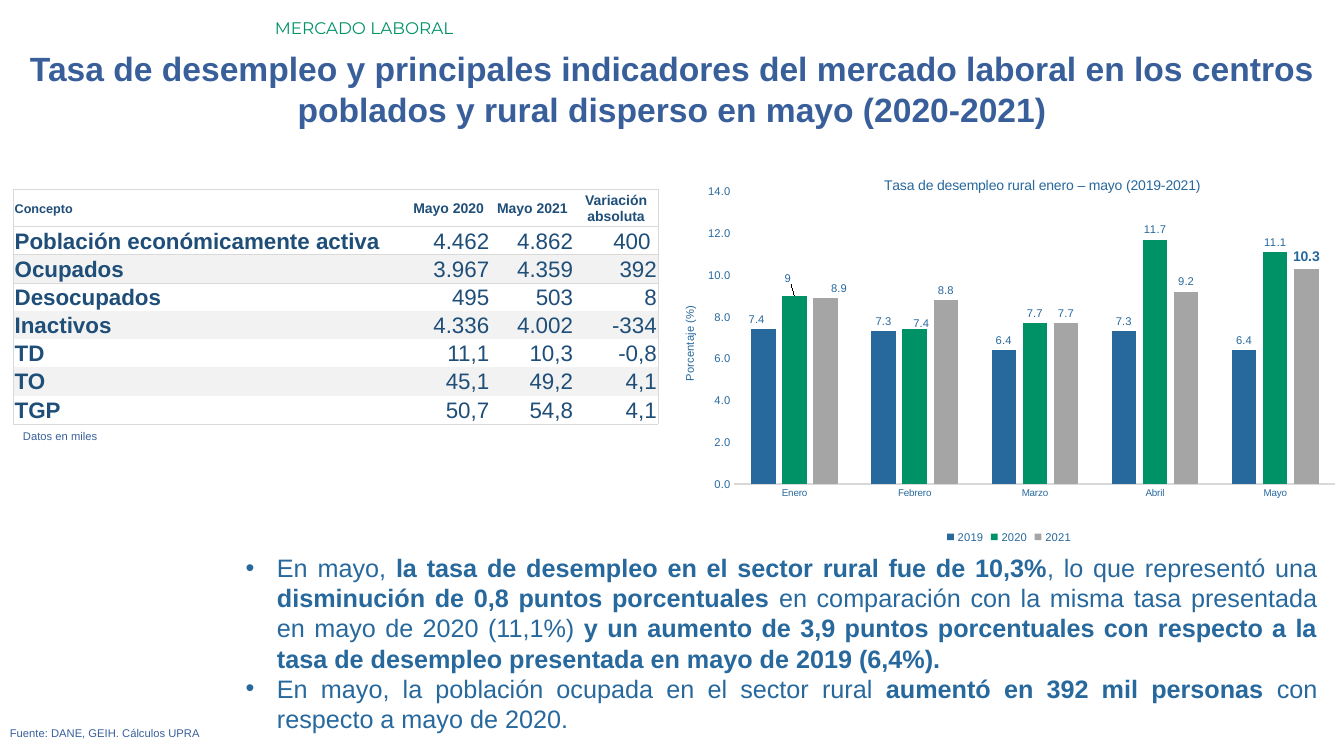
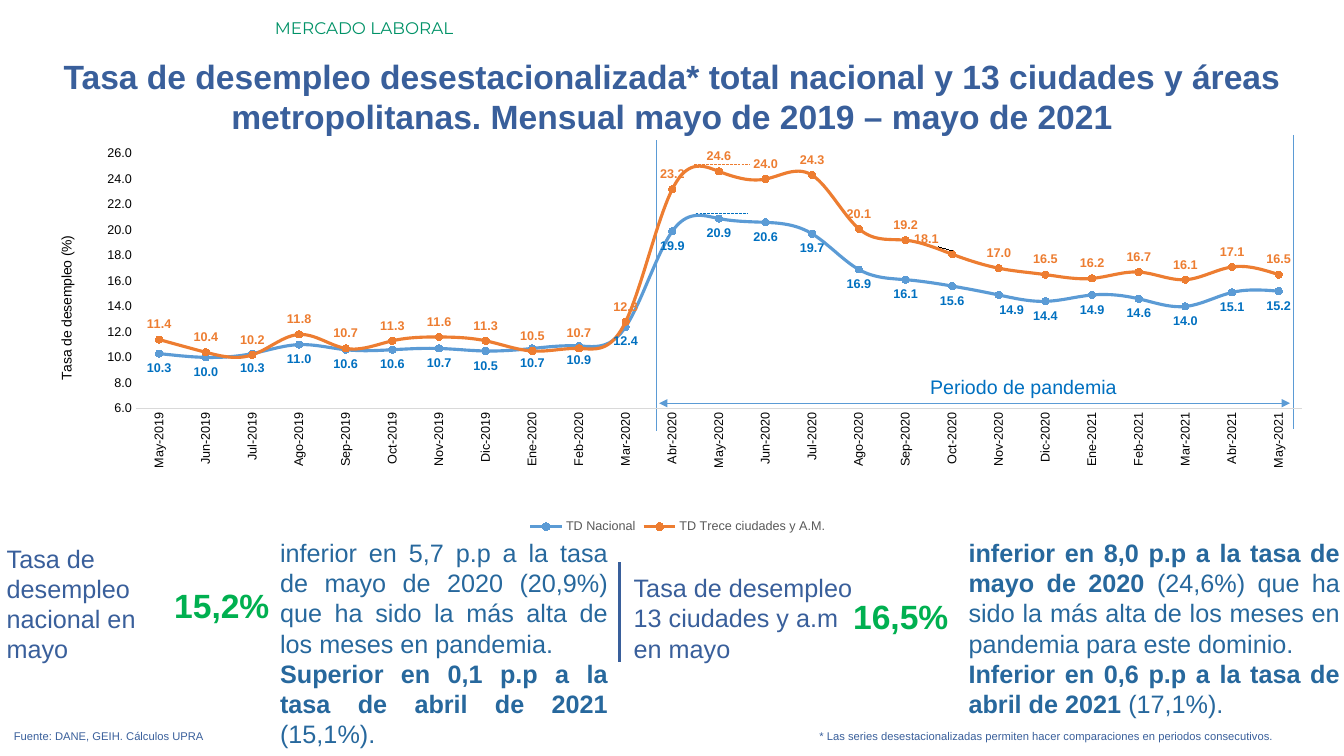
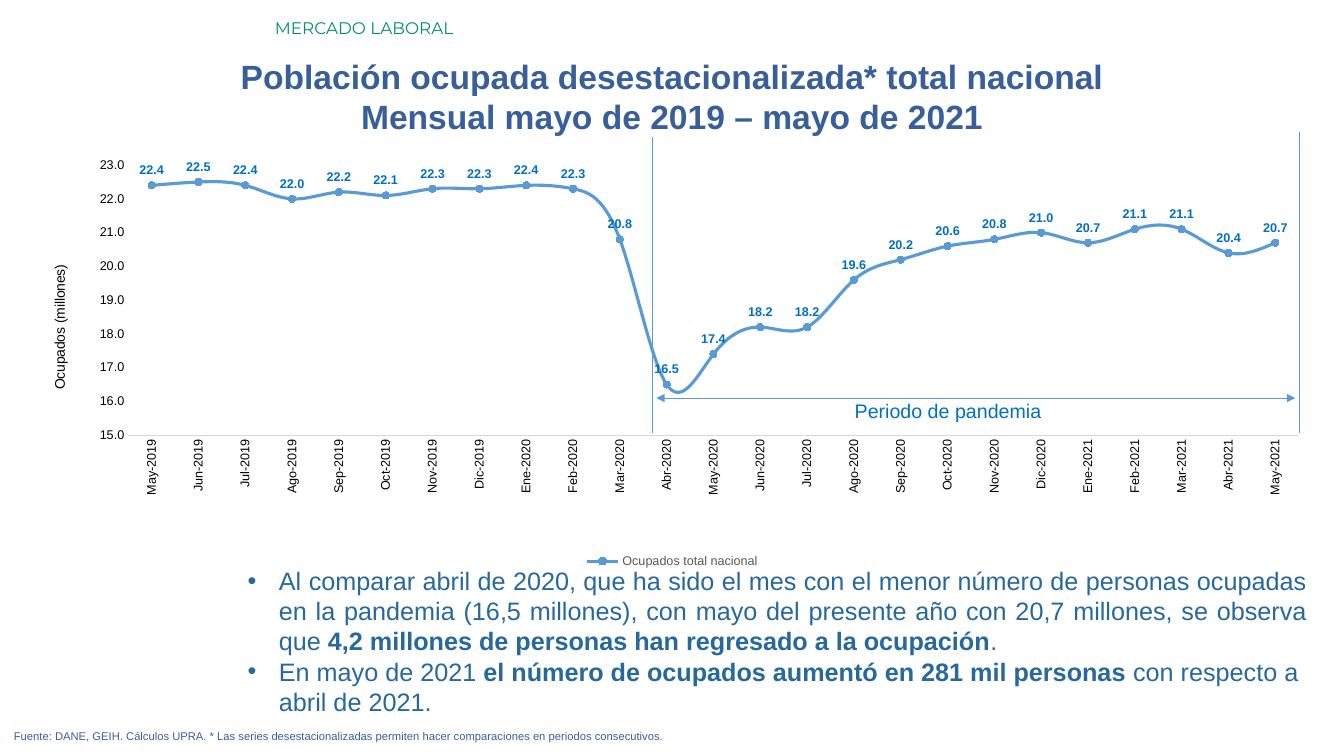
from lxml import etree
from pptx import Presentation
from pptx.chart.data import CategoryChartData
from pptx.dml.color import RGBColor
from pptx.enum.chart import (XL_CHART_TYPE, XL_LABEL_POSITION, XL_LEGEND_POSITION,
                             XL_MARKER_STYLE, XL_TICK_MARK)
from pptx.enum.dml import MSO_LINE
from pptx.enum.shapes import MSO_CONNECTOR
from pptx.enum.text import MSO_ANCHOR, MSO_AUTO_SIZE, PP_ALIGN
from pptx.oxml.ns import qn
from pptx.util import Cm, Pt

COLUMNS, LINES = XL_CHART_TYPE.COLUMN_CLUSTERED, XL_CHART_TYPE.LINE_MARKERS
OUTSIDE, ABOVE, BELOW = (XL_LABEL_POSITION.OUTSIDE_END, XL_LABEL_POSITION.ABOVE,
                         XL_LABEL_POSITION.BELOW)
LEFT, CENTER, RIGHT, JUSTIFY = PP_ALIGN.LEFT, PP_ALIGN.CENTER, PP_ALIGN.RIGHT, PP_ALIGN.JUSTIFY
NO_TICK, STRAIGHT = XL_TICK_MARK.NONE, MSO_CONNECTOR.STRAIGHT

NAVY, BLUE, GREEN, RESULT = "395F9B", "27689D", "009267", "00B050"
SKY, ORANGE, STRONG_BLUE, GRAY = "5B9BD5", "ED7D31", "0070C0", "A5A5A5"
TABLE_INK, RULE, BAND, BLACK, LEGEND_INK = "1F4E78", "D9D9D9", "F2F2F2", "000000", "595959"
PLAIN_TABLE = "{2D5ABB26-0587-4C30-8999-92F81FD0307C}"
ONE_DECIMAL = "#,##0.0"

SECTION = "MERCADO LABORAL"
SOURCE = "Fuente: DANE, GEIH. Cálculos UPRA"
SERIES_NOTE = "* Las series desestacionalizadas permiten hacer comparaciones en periodos consecutivos."
PERIOD = "Periodo de pandemia"

TITLES = [
    (1.09, ["Tasa de desempleo y principales indicadores del mercado laboral en los centros "
            "poblados y rural disperso en mayo (2020-2021)"]),
    (1.27, ["Tasa de desempleo desestacionalizada* total nacional y 13 ciudades y áreas "
            "metropolitanas. Mensual mayo de 2019 – mayo de 2021"]),
    (1.27, ["Población ocupada desestacionalizada* total nacional",
            "Mensual mayo de 2019 – mayo de 2021"]),
]
FOOTERS = [
    [(0, 18.19, SOURCE)],
    [(0.1, 18.26, SOURCE), (20.4, 18.26, SERIES_NOTE)],
    [(0.1, 18.26, f"{SOURCE}. {SERIES_NOTE}")],
]

INDICATORS = [
    ("Concepto", "Mayo 2020", "Mayo 2021", "Variación absoluta"),
    ("Población económicamente activa", "4.462", "4.862", "400 "),
    ("Ocupados", "3.967", "4.359", "392"),
    ("Desocupados", "495", "503", "8"),
    ("Inactivos", "4.336", "4.002", "-334"),
    ("TD", "11,1", "10,3", "-0,8"),
    ("TO", "45,1", "49,2", "4,1"),
    ("TGP", "50,7", "54,8", "4,1"),
]
RURAL_BULLETS = [
    "En mayo, **la tasa de desempleo en el sector rural fue de 10,3%**, lo que representó una "
    "**disminución de 0,8 puntos porcentuales** en comparación con la misma tasa presentada en "
    "mayo de 2020 (11,1%) **y un aumento de 3,9 puntos porcentuales con respecto a la tasa de "
    "desempleo presentada en mayo de 2019 (6,4%).**",
    "En mayo, la población ocupada en el sector rural **aumentó en 392 mil personas **con "
    "respecto a mayo de 2020.",
]
EMPLOYED_BULLETS = [
    "Al comparar abril de 2020, que ha sido el mes con el menor número de personas ocupadas en "
    "la pandemia (16,5 millones), con mayo del presente año con 20,7 millones, se observa que "
    "**4,2 millones de personas han regresado a la ocupación**.",
    "En mayo de 2021 **el número de ocupados aumentó en 281 mil personas **con respecto a "
    "abril de 2021.",
]
RATE_TEXTS = [
    ((-0.08, 13.56, 5.64, 3.33), ["Tasa de desempleo nacional en", "mayo"], 18, NAVY, LEFT),
    ((4.09, 14.61, 2.95, 1.27), ["**15,2%**"], 24, RESULT, RIGHT),
    ((6.81, 13.41, 8.76, 5.64),
     ["inferior en 5,7 p.p a la tasa de mayo de 2020 (20,9%) que ha sido la más alta de los "
      "meses en pandemia.",
      "**Superior en 0,1 p.p a la tasa de abril de 2021 **(15,1%)."], 18, BLUE, JUSTIFY),
    ((15.72, 14.3, 6.22, 3.33), ["Tasa de desempleo", "13 ciudades y a.m en mayo"], 18, NAVY, LEFT),
    ((20.47, 14.88, 3.68, 1.27), ["**16,5%**"], 24, RESULT, RIGHT),
    ((24.16, 13.41, 9.86, 4.88),
     ["**inferior en 8,0 p.p a la tasa de mayo de 2020 **(24,6%) que ha sido la más alta de los "
      "meses en pandemia para este dominio.",
      "**Inferior en 0,6 p.p a la tasa de abril de 2021 **(17,1%)."], 18, BLUE, JUSTIFY),
]

MONTH_NAMES = "Ene Feb Mar Abr May Jun Jul Ago Sep Oct Nov Dic".split()
MONTHS = [f"{MONTH_NAMES[i % 12]}-{2019 + i // 12}" for i in range(4, 29)]

RURAL_CHART = {
    "kind": COLUMNS, "box": (16.97, 4.09, 16.92, 9.7), "plot": (0.091, 0.076, 0.895, 0.76),
    "categories": ["Enero", "Febrero", "Marzo", "Abril", "Mayo"],
    "title": ("Tasa de desempleo rural enero – mayo (2019-2021)", 0.31, 0.03),
    "axis_title": ("Porcentaje (%)", 0.01, 0.366), "scale": (0, 14, 2),
    "size": 8, "month_size": 7, "ink": BLUE, "legend_ink": BLUE,
    "bold": False, "label_format": "General",
    "series": [("2019", [7.4, 7.3, 6.4, 7.3, 6.4], BLUE, BLUE, OUTSIDE),
               ("2020", [9, 7.4, 7.7, 11.7, 11.1], GREEN, BLUE, OUTSIDE),
               ("2021", [8.9, 8.8, 7.7, 9.2, 10.3], GRAY, BLUE, OUTSIDE)],
    "nudges": [(0, 0, -0.01, 0), (1, 0, -0.01, -0.02), (1, 1, 0.01, 0.01), (2, 0, 0.02, 0)],
}
MONTHLY = {
    "kind": LINES, "plot": (0.079, 0.051, 0.906, 0.629), "categories": MONTHS, "title": None,
    "size": 9, "month_size": 9, "ink": BLACK, "legend_ink": LEGEND_INK,
    "bold": True, "label_format": ONE_DECIMAL, "nudges": [],
}
RATE_CHART = MONTHLY | {
    "box": (0.86, 3.35, 32.44, 10.21), "scale": (6, 26, 2),
    "axis_title": ("Tasa de desempleo (%)", 0.016, 0.247),
    "series": [
        ("TD Nacional", [10.3, 10, 10.3, 11, 10.6, 10.6, 10.7, 10.5, 10.7, 10.9, 12.4, 19.9, 20.9,
                         20.6, 19.7, 16.9, 16.1, 15.6, 14.9, 14.4, 14.9, 14.6, 14, 15.1, 15.2],
         SKY, STRONG_BLUE, BELOW),
        ("TD Trece ciudades y A.M.",
         [11.4, 10.4, 10.2, 11.8, 10.7, 11.3, 11.6, 11.3, 10.5, 10.7, 12.8, 23.2, 24.6,
          24, 24.3, 20.1, 19.2, 18.1, 17, 16.5, 16.2, 16.7, 16.1, 17.1, 16.5],
         ORANGE, ORANGE, ABOVE)],
    "nudges": [(0, 18, 0.01, 0), (1, 17, -0.02, 0)],
}
EMPLOYED_CHART = MONTHLY | {
    "box": (0.66, 3.61, 32.56, 10.82), "scale": (15, 23, 1),
    "axis_title": ("Ocupados (millones)", 0.017, 0.277),
    "series": [
        ("Ocupados total nacional",
         [22.4, 22.5, 22.4, 22, 22.2, 22.1, 22.3, 22.3, 22.4, 22.3, 20.8, 16.5, 17.4,
          18.2, 18.2, 19.6, 20.2, 20.6, 20.8, 21, 20.7, 21.1, 21.1, 20.4, 20.7],
         SKY, STRONG_BLUE, ABOVE)],
}


def rgb(color):
    return RGBColor.from_string(color)


def style(font, size, color, bold=False, name="Arial"):
    for key, value in {"size": Pt(size), "bold": bold, "name": name}.items():
        setattr(font, key, value)
    font.color.rgb = rgb(color)


def write(frame, paragraphs, size, color, align=LEFT, bold=False, name="Arial", bullet=False):
    for i, content in enumerate(paragraphs):
        paragraph = frame.paragraphs[0] if i == 0 else frame.add_paragraph()
        paragraph.alignment = align
        if bullet:
            properties = paragraph._p.get_or_add_pPr()
            properties.set("marL", str(Cm(0.79)))
            properties.set("indent", str(-Cm(0.79)))
            etree.SubElement(properties, qn("a:buFont")).set("typeface", "Arial")
            etree.SubElement(properties, qn("a:buChar")).set("char", "•")
        for j, part in enumerate(content.split("**")):
            if part:
                run = paragraph.add_run()
                run.text = part
                style(run.font, size, color, bold or j % 2 == 1, name)


def add_text(slide, box, paragraphs, size, color, align=LEFT, **options):
    frame = slide.shapes.add_textbox(*map(Cm, box)).text_frame
    frame.word_wrap = True
    write(frame, paragraphs, size, color, align, **options)
    return frame


def add_line(slide, start, end, color, width, dash=None, arrows=False):
    line = slide.shapes.add_connector(STRAIGHT, *map(Cm, start + end))
    etree.SubElement(line._element.spPr, qn("a:effectLst"))
    line.line.color.rgb = rgb(color)
    line.line.width = Pt(width)
    if dash:
        line.line.dash_style = dash
    if arrows:
        for tag in ("a:headEnd", "a:tailEnd"):
            etree.SubElement(line.line._get_or_add_ln(), qn(tag)).set("type", "triangle")


def add_period(slide, left, right, arrow, label):
    for x, top, bottom in (left, right):
        add_line(slide, (x, top), (x, bottom), SKY, 0.5)
    start, end, y = arrow
    add_line(slide, (start, y), (end, y), SKY, 0.5, arrows=True)
    add_text(slide, (*label, 6.68, 0.86), [PERIOD], 14, STRONG_BLUE)


def add_layout(parent, index, **values):
    for old in parent.findall(qn("c:layout")):
        parent.remove(old)
    layout = etree.Element(qn("c:layout"))
    manual = etree.SubElement(layout, qn("c:manualLayout"))
    for tag, value in values.items():
        etree.SubElement(manual, qn(f"c:{tag}")).set("val", str(value))
    parent.insert(index, layout)


def write_chart_title(title, content, size, color):
    words, x, y = content
    write(title.text_frame, [words], size, color, CENTER)
    add_layout(title._element, 1, xMode="edge", yMode="edge", x=x, y=y)


def format_axes(chart, data):
    months, values = chart.category_axis, chart.value_axis
    for axis, size in ((months, data["month_size"]), (values, data["size"])):
        axis.has_major_gridlines = False
        axis.major_tick_mark = axis.minor_tick_mark = NO_TICK
        style(axis.tick_labels.font, size, data["ink"])
    months.format.line.color.rgb = rgb(RULE)
    months.format.line.width = Pt(0.75)
    values.format.line.fill.background()
    values.minimum_scale, values.maximum_scale, values.major_unit = data["scale"]
    values.tick_labels.number_format = ONE_DECIMAL
    values.tick_labels.number_format_is_linked = False
    values.has_title = True
    write_chart_title(values.axis_title, data["axis_title"],
                      8 if data["kind"] == COLUMNS else 10, data["ink"])
    if data["kind"] == LINES:
        months._element.find(qn("c:txPr")).find(qn("a:bodyPr")).set("rot", "-5400000")
    if values._element.find(qn("c:crossBetween")) is None:
        between = etree.Element(qn("c:crossBetween"))
        between.set("val", "between")
        values._element.find(qn("c:crosses")).addnext(between)


def format_series(series, data, color, label_color, position):
    if data["kind"] == COLUMNS:
        series.format.fill.solid()
        series.format.fill.fore_color.rgb = rgb(color)
    else:
        series.smooth = True
        series.format.line.color.rgb = rgb(color)
        series.format.line.width = Pt(2.25)
        series.marker.style = XL_MARKER_STYLE.CIRCLE
        series.marker.size = 5
        series.marker.format.fill.solid()
        series.marker.format.fill.fore_color.rgb = rgb(color)
        series.marker.format.line.color.rgb = rgb(color)
    labels = series.data_labels
    for key, value in {"show_value": True, "position": position,
                       "number_format": data["label_format"],
                       "number_format_is_linked": False}.items():
        setattr(labels, key, value)
    style(labels.font, data["size"], label_color, data["bold"])


def add_chart(slide, data):
    chart_data = CategoryChartData()
    chart_data.categories = data["categories"]
    for name, values, *_ in data["series"]:
        chart_data.add_series(name, values)
    chart = slide.shapes.add_chart(data["kind"], *map(Cm, data["box"]), chart_data).chart
    style(chart.font, data["size"], data["ink"])
    chart.has_title = data["title"] is not None
    if data["title"]:
        write_chart_title(chart.chart_title, data["title"], 10, data["ink"])
    chart.has_legend = True
    chart.legend.position = XL_LEGEND_POSITION.BOTTOM
    chart.legend.include_in_layout = False
    style(chart.legend.font, data["size"], data["legend_ink"])
    format_axes(chart, data)
    plot = chart.plots[0]
    plot.vary_by_categories = False
    if data["kind"] == COLUMNS:
        plot.gap_width, plot.overlap = 136, -27
    for series, (_, _, *look) in zip(plot.series, data["series"]):
        format_series(series, data, *look)
    for series_index, point, dx, dy in data["nudges"]:
        _, _, _, color, position = data["series"][series_index]
        label = plot.series[series_index].points[point].data_label
        style(label.font, data["size"], color, data["bold"])
        label.position = position
        add_layout(label._get_or_add_dLbl(), 1, x=dx, y=dy)
    x, y, w, h = data["plot"]
    add_layout(chart._chartSpace.chart.plotArea, 0, layoutTarget="inner",
               xMode="edge", yMode="edge", x=x, y=y, w=w, h=h)
    return chart


def add_border(cell, side):
    line = etree.SubElement(cell._tc.get_or_add_tcPr(), qn(f"a:ln{side}"))
    line.set("w", str(Pt(0.5)))
    fill = etree.SubElement(line, qn("a:solidFill"))
    etree.SubElement(fill, qn("a:srgbClr")).set("val", RULE)


def add_indicators(slide):
    widths = [9.91] + [2.11] * 3
    heights = [0.93] + [0.71] * (len(INDICATORS) - 1)
    last_row, last_column = len(heights) - 1, len(widths) - 1
    table = slide.shapes.add_table(len(heights), len(widths), Cm(0.34), Cm(4.78),
                                   Cm(sum(widths)), Cm(sum(heights))).table
    table._tbl.tblPr.find(qn("a:tableStyleId")).text = PLAIN_TABLE
    for column, width in zip(table.columns, widths):
        column.width = Cm(width)
    for row, height in zip(table.rows, heights):
        row.height = Cm(height)
    for r, record in enumerate(INDICATORS):
        for c, content in enumerate(record):
            cell = table.cell(r, c)
            cell.margin_left = cell.margin_right = cell.margin_top = Cm(0.03)
            cell.margin_bottom = 0
            cell.vertical_anchor = MSO_ANCHOR.MIDDLE
            for side, drawn in (("L", c == 0), ("R", c == last_column),
                                ("T", r <= 2), ("B", r in (0, 1, last_row))):
                if drawn:
                    add_border(cell, side)
            if r and r % 2 == 0:
                cell.fill.solid()
                cell.fill.fore_color.rgb = rgb(BAND)
            else:
                cell.fill.background()
            size = 16 if r else 10 if c else 9
            align = LEFT if c == 0 else RIGHT if r else CENTER
            write(cell.text_frame, [content], size, TABLE_INK, align, bold=r == 0 or c == 0)


def add_slide(prs, title, footers):
    slide = prs.slides.add_slide(prs.slide_layouts[5])
    top, lines = title
    heading = slide.shapes.title
    heading.left, heading.top, heading.width, heading.height = map(Cm, (0, top, 33.87, 2.31))
    frame = heading.text_frame
    for key, value in {"word_wrap": True, "auto_size": MSO_AUTO_SIZE.NONE,
                       "vertical_anchor": MSO_ANCHOR.TOP}.items():
        setattr(frame, key, value)
    write(frame, lines, 24, NAVY, CENTER, bold=True)
    add_text(slide, (6.68, 0.33, 27.18, 0.76), [SECTION], 12, GREEN, name="Montserrat")
    for x, y, note in footers:
        add_text(slide, (x, y, 32.8 - x, 0.61), [note], 8, NAVY)
    return slide


def main():
    prs = Presentation()
    prs.slide_width, prs.slide_height = Cm(33.87), Cm(19.05)
    rural, rates, employed = [add_slide(prs, *parts) for parts in zip(TITLES, FOOTERS)]

    add_text(rural, (5.94, 13.79, 27.51, 4.88), RURAL_BULLETS, 18, BLUE, JUSTIFY, bullet=True)
    add_text(rural, (0.33, 10.69, 15.88, 0.61), ["Datos en miles"], 8, NAVY)
    add_indicators(rural)
    rural_chart = add_chart(rural, RURAL_CHART)
    latest = rural_chart.plots[0].series[2].points[4].data_label
    style(latest.font, 10, BLUE, True)
    latest.position = OUTSIDE

    for content in RATE_TEXTS:
        add_text(rates, *content)
    add_line(rates, (15.62, 14.17), (15.62, 16.69), NAVY, 2.25)
    add_period(rates, (16.54, 3.53, 10.85), (32.59, 3.4, 10.82),
               (16.61, 32.51, 10.16), (23.19, 9.32))
    for start, end, y, color in ((17.5, 18.9, 4.14, ORANGE), (17.53, 18.82, 5.36, STRONG_BLUE)):
        add_line(rates, (start, y), (end, y), color, 0.25, MSO_LINE.LONG_DASH)
    add_chart(rates, RATE_CHART)

    add_period(employed, (16.43, 3.45, 10.9), (32.74, 3.33, 10.92),
               (16.54, 32.64, 10.03), (21.29, 9.93))
    bullets = add_text(employed, (5.99, 14.12, 27.2, 4.11), EMPLOYED_BULLETS, 18, BLUE,
                       JUSTIFY, bullet=True)
    bullets.paragraphs[1].alignment = LEFT
    add_chart(employed, EMPLOYED_CHART)

    prs.save("out.pptx")


if __name__ == "__main__":
    main()
